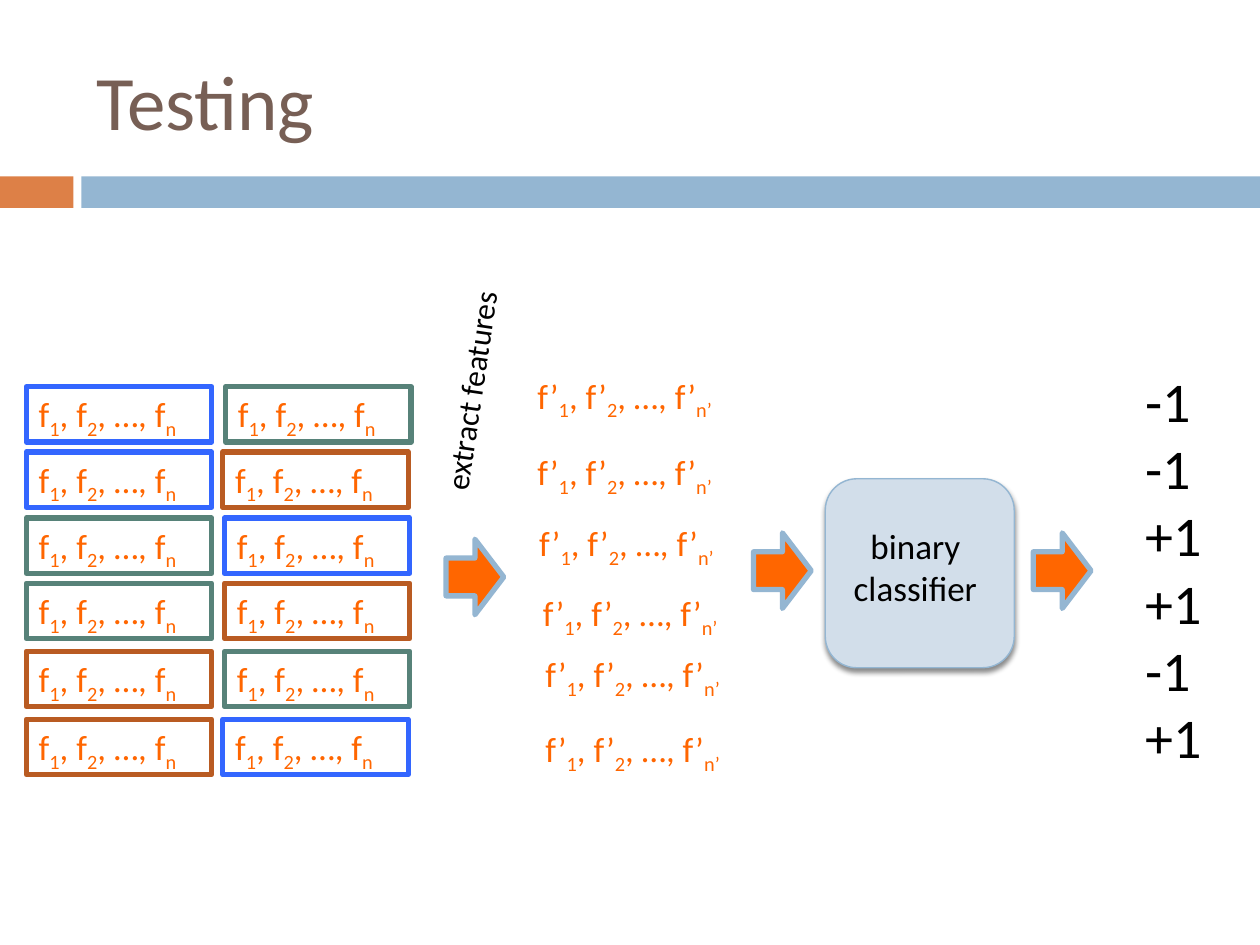
from lxml.etree import SubElement as Sub
from pptx import Presentation
from pptx.dml.color import RGBColor
from pptx.enum.shapes import MSO_SHAPE as Kind
from pptx.enum.text import MSO_ANCHOR as Anchor, PP_ALIGN as Align
from pptx.oxml.ns import qn
from pptx.util import Pt

BLUE = RGBColor(0x33, 0x66, 0xFF)
GREEN = RGBColor(0x57, 0x82, 0x79)
RUST = RGBColor(0xB9, 0x5B, 0x22)
ORANGE = RGBColor(0xFF, 0x66, 0x00)
CLAY = RGBColor(0xDD, 0x80, 0x47)
SKY = RGBColor(0x94, 0xB6, 0xD2)
PALE = RGBColor(0xD2, 0xDE, 0xEA)
BROWN = RGBColor(0x77, 0x5F, 0x55)
BLACK = RGBColor(0, 0, 0)

deck = Presentation()
deck.slide_width, deck.slide_height = Pt(720), Pt(540)
slide = deck.slides.add_slide(deck.slide_layouts[6])


def draw(home, kind, box, fill=None, line=None, width=3):
    shape = home.add_shape(kind, *map(Pt, box))
    shape.shadow.inherit = False
    if fill is None:
        shape.fill.background()
    else:
        shape.fill.solid()
        shape.fill.fore_color.rgb = fill
    if line is None:
        shape.line.fill.background()
    else:
        shape.line.color.rgb = line
        shape.line.width = Pt(width)
    return shape


def write(shape, lines, size, color, align=Align.LEFT, anchor=Anchor.TOP):
    """Each line is a list of words; every second one is a subscript."""
    frame = shape.text_frame
    frame.word_wrap = True
    frame.vertical_anchor = anchor
    for i, line in enumerate(lines):
        para = frame.add_paragraph() if i else frame.paragraphs[0]
        para.alignment = align
        for j, word in enumerate(line):
            run = para.add_run()
            run.text = word
            run.font.name = "Calibri"
            run.font.size = Pt(size)
            run.font.color.rgb = color
            if j % 2:
                run.font._element.set("baseline", "-25000")
    return frame


# Title and bands
shapes = slide.shapes
draw(shapes, Kind.RECTANGLE, (0, 100.8, 42, 18), CLAY)
draw(shapes, Kind.RECTANGLE, (46.5, 100.8, 673.5, 18), SKY)
title = shapes.add_textbox(Pt(48), Pt(18), Pt(642), Pt(78))
write(title, [["Testing"]], 44, BROWN, anchor=Anchor.MIDDLE)

# Pairs of input features
tops = [221, 258.3, 296, 333.3, 372.2, 411]
lefts = [128.9, 127.3, 128.2, 128.2, 128.2, 127.3]
pairs = [(BLUE, GREEN), (BLUE, RUST), (GREEN, BLUE),
         (GREEN, RUST), (RUST, GREEN), (RUST, BLUE)]
for top, left, pair in zip(tops, lefts, pairs):
    for x, color in zip((15, left), pair):
        cell = draw(shapes, Kind.RECTANGLE, (x, top, 106, 31.7), line=color)
        write(cell, [["f", "1", ", f", "2", ", …, f", "n"]], 20, ORANGE)

# Extracted features
label = shapes.add_textbox(Pt(204.5), Pt(208.8), Pt(129), Pt(29))
label.rotation = 278.4
write(label, [["extract features"]], 18, BLACK).word_wrap = False
spots = [(300, 210.2), (300, 254), (301, 294.6),
         (303.2, 334.6), (304.5, 369.2), (304.5, 412.4)]
for x, y in spots:
    item = shapes.add_textbox(Pt(x), Pt(y), Pt(126), Pt(31.7))
    write(item, [["f’", "1", ", f’", "2", ", …, f’", "n’"]], 20, ORANGE)

# Arrows
for x, y in [(249.8, 313.2), (425.5, 309.6), (585.4, 309.6)]:
    arrow = draw(shapes, Kind.DOWN_ARROW, (x, y, 43.2, 33), ORANGE, SKY)
    arrow.rotation = 270

# Classifier
group = shapes.add_group_shape().shapes
block = draw(group, Kind.ROUNDED_RECTANGLE, (471.6, 273.6, 108, 108),
             PALE, SKY, 0.79)
glow = Sub(block._element.spPr.find(qn("a:effectLst")), qn("a:outerShdw"),
           blurRad=str(Pt(3)), dist=str(Pt(2.4)), dir="5400000",
           rotWithShape="0")
tint = Sub(glow, qn("a:srgbClr"), val="000000")
Sub(tint, qn("a:alpha"), val="45000")
name = group.add_textbox(Pt(466.6), Pt(295.9), Pt(113), Pt(55.4))
write(name, [["binary classifier"]], 20, BLACK, Align.CENTER)

# Predictions
marks = shapes.add_textbox(Pt(647.3), Pt(205.9), Pt(54), Pt(239.8))
write(marks, [[m] for m in ("-1", "-1", "+1", "+1", "-1", "+1")], 32, BLACK)

deck.save("out.pptx")
